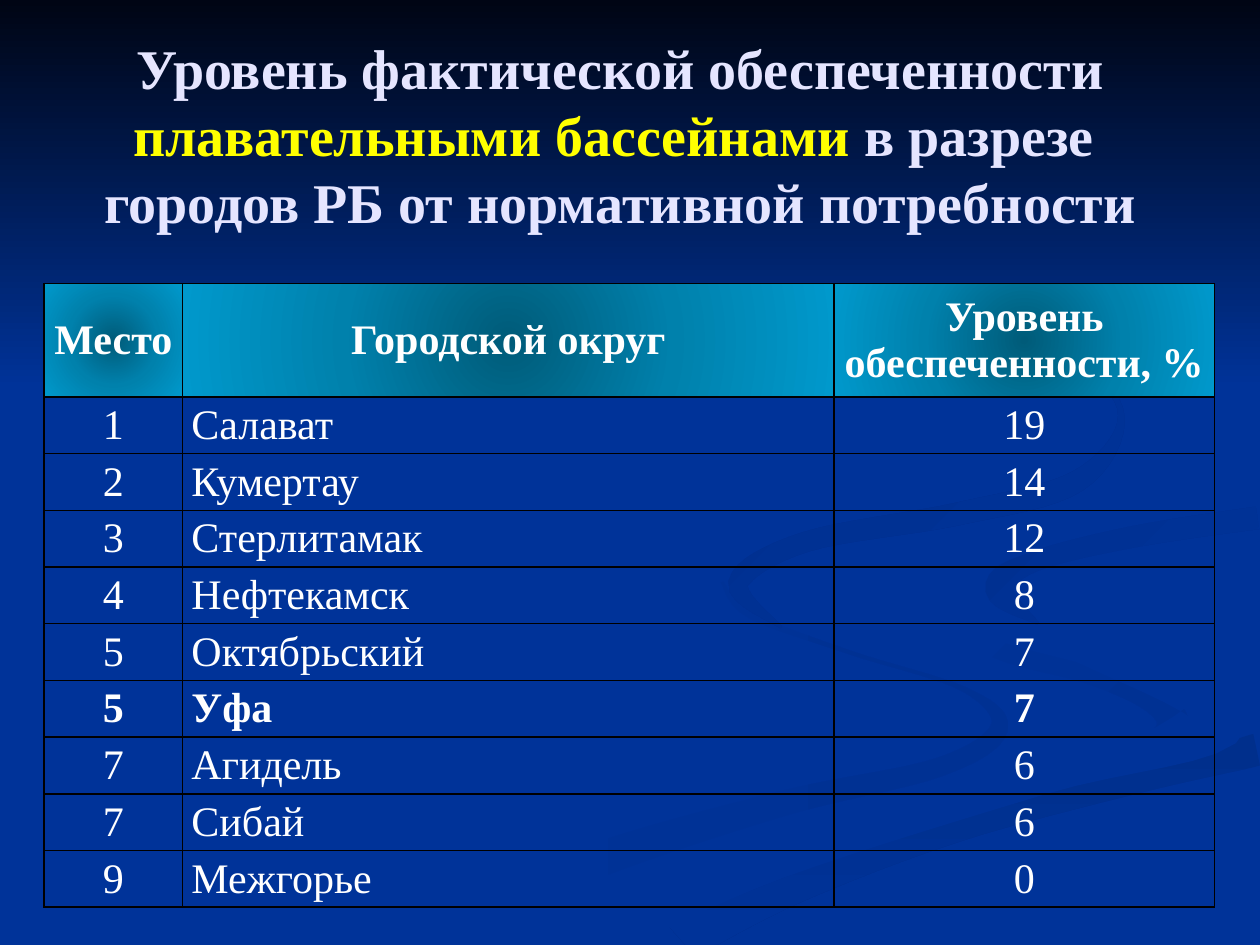
from math import hypot

from lxml import etree
from pptx import Presentation
from pptx.dml.color import RGBColor
from pptx.enum.shapes import MSO_SHAPE
from pptx.enum.text import MSO_ANCHOR, MSO_AUTO_SIZE, PP_ALIGN
from pptx.oxml import parse_xml
from pptx.oxml.ns import nsdecls, qn
from pptx.util import Inches, Pt

CENTER, LEFT = PP_ALIGN.CENTER, PP_ALIGN.LEFT
MIDDLE = MSO_ANCHOR.MIDDLE
NO_AUTOFIT = MSO_AUTO_SIZE.NONE
RECTANGLE = MSO_SHAPE.RECTANGLE
SLIDE_WIDTH, SLIDE_HEIGHT = 10, 7.5
STEPS_PER_SPAN = 8

COLORS = {
    "background": "003399", "night": "000514", "title": "E5E5FF", "accent": "FFFF00",
    "text": "FFFFFF", "border": "000000",
    "header_core": "005B79", "header_middle": "0081AC", "header_edge": "0099CC",
    "shade_left": "003193", "shade_bottom": "002F8C", "shade_right": "003091",
    "shade_top": "002F8E",
}

# Each ribbon: start colour, end colour, gradient angle, knots of (x, y, thickness).
RIBBONS = {
    "left tail": ("background", "shade_left", 0, [
        (5.73, 4.62, 0.02), (5.95, 4.88, 0.05), (6.75, 5.18, 0.03), (7.65, 5.47, 0.04),
        (7.93, 5.78, 0.14), (7.45, 6.09, 0.15), (6.2, 6.38, 0.2), (4.6, 6.88, 0.28),
        (3.3, 7.49, 0.28)]),
    "right bend": ("background", "shade_left", 45, [
        (7.24, 4.66, 0), (7.4, 4.9, 0.06), (7.95, 5.17, 0.14), (8.65, 5.36, 0.14),
        (9.15, 5.57, 0.18), (9.3, 5.78, 0.25), (8.94, 6.05, 0)]),
    "lower sweep": ("shade_bottom", "background", 90, [
        (5.37, 7.49, 0.33), (6.3, 7.06, 0.23), (7.6, 6.58, 0.2), (9.03, 6.2, 0.19),
        (9.98, 5.95, 0.26)]),
    "main ribbon": ("background", "background", 0, [
        (9.99, 3.95, 0.15), (8.6, 4.18, 0.15), (7.55, 4.6, 0.5), (8.6, 5.17, 0.2),
        (9.7, 5.65, 0.5), (8.3, 6.25, 0.1), (6.2, 6.91, 0.12), (4.9, 7.49, 0.13)]),
    "upper branch": ("shade_right", "background", 45, [
        (9.98, 4.11, 0.18), (9, 4.26, 0.17), (8.2, 4.46, 0.16), (7.93, 4.68, 0.22),
        (8.24, 4.95, 0.02)]),
    "top swirl": ("shade_top", "background", 45, [
        (7.64, 2.34, 0.01), (8.5, 2.81, 0.05), (8.9, 3.3, 0.05), (8.55, 3.82, 0.17),
        (7.6, 4.08, 0.18), (6.4, 4.3, 0.16), (5.86, 4.63, 0.16), (6.2, 4.98, 0.02)]),
}
TITLE_LINES = [
    [("Уровень фактической обеспеченности ", "title"),
     ("плавательными бассейнами ", "accent"), ("в разрезе ", "title")],
    [("городов РБ от нормативной потребности", "title")],
]
HEADER = ("Место", "Городской округ", "Уровень обеспеченности, %")
CITIES = [
    ("1", "Салават", "19"), ("2", "Кумертау", "14"), ("3", "Стерлитамак", "12"),
    ("4", "Нефтекамск", "8"), ("5", "Октябрьский", "7"), ("5", "Уфа", "7"),
    ("7", "Агидель", "6"), ("7", "Сибай", "6"), ("9", "Межгорье", "0"),
]
BOLD_CITY = "Уфа"


def smooth(knots):
    """Return samples of the Catmull-Rom curve that passes through the knots."""
    padded = [knots[0], *knots, knots[-1]]
    samples = []
    for span in zip(padded, padded[1:], padded[2:], padded[3:]):
        for step in range(STEPS_PER_SPAN):
            t = step / STEPS_PER_SPAN
            samples.append(tuple(
                b + t * (c - a + t * (2 * a - 5 * b + 4 * c - d
                                      + t * (3 * b - a - 3 * c + d))) / 2
                for a, b, c, d in zip(*span)))
    return samples + [knots[-1]]


def ribbon_outline(knots):
    """Return the outline half a thickness to either side of the smoothed knots."""
    samples = smooth(knots)
    neighbours = zip([samples[0], *samples], samples, samples[1:] + [samples[-1]])
    one_side, other_side = [], []
    for before, (x, y, thickness), after in neighbours:
        run, rise = after[0] - before[0], after[1] - before[1]
        scale = thickness / 2 / hypot(run, rise)
        for side, sign in ((one_side, 1), (other_side, -1)):
            side.append((min(x - sign * rise * scale, SLIDE_WIDTH),
                         min(y + sign * run * scale, SLIDE_HEIGHT)))
    return one_side + other_side[::-1]


class SlideBuilder:
    """Holds the style and the current slide and draws its elements."""

    font_name = "Times New Roman"

    def __init__(self, presentation):
        self.slide = presentation.slides.add_slide(presentation.slide_layouts[5])
        fill = self.slide.background.fill
        fill.solid()
        fill.fore_color.rgb = self.color("background")

    def color(self, name):
        return RGBColor.from_string(COLORS[name])

    def style(self, paragraph, size, bold, alignment):
        paragraph.alignment = alignment
        font = paragraph.font
        font.name, font.size, font.bold = self.font_name, Pt(size), bold

    def shade(self, shape, start, end, angle):
        shape.shadow.inherit = False
        shape.line.fill.background()
        shape.fill.gradient()
        shape.fill.gradient_angle = -angle % 360
        for stop, name, position in zip(shape.fill.gradient_stops, (start, end), (0, 1)):
            stop.color.rgb = self.color(name)
            stop.position = position

    def ribbon(self, start, end, angle, knots):
        corners = [(Inches(x), Inches(y)) for x, y in ribbon_outline(knots)]
        builder = self.slide.shapes.build_freeform(*corners[0])
        builder.add_line_segments(corners[1:], close=True)
        self.shade(builder.convert_to_shape(), start, end, angle)

    def sky(self, height):
        shape = self.slide.shapes.add_shape(
            RECTANGLE, 0, 0, Inches(SLIDE_WIDTH), Inches(height))
        self.shade(shape, "night", "background", 90)

    def title(self, lines, left, top, width, height):
        shape = self.slide.shapes.title
        shape.left, shape.top = Inches(left), Inches(top)
        shape.width, shape.height = Inches(width), Inches(height)
        self.slide.shapes._spTree.append(shape._element)
        frame = shape.text_frame
        frame.word_wrap, frame.auto_size, frame.vertical_anchor = True, NO_AUTOFIT, MIDDLE
        paragraph = frame.paragraphs[0]
        self.style(paragraph, 32, True, CENTER)
        for index, line in enumerate(lines):
            if index:
                paragraph.add_line_break()
            for text, name in line:
                run = paragraph.add_run()
                run.text = text
                run.font.color.rgb = self.color(name)

    def borders(self, cell):
        properties = cell._tc.get_or_add_tcPr()
        for side in ("lnL", "lnR", "lnT", "lnB"):
            line = etree.SubElement(properties, qn(f"a:{side}"), w=str(Pt(1)))
            fill = etree.SubElement(line, qn("a:solidFill"))
            etree.SubElement(fill, qn("a:srgbClr"), val=COLORS["border"])

    def radial_fill(self, cell):
        names = ("header_core", "header_middle", "header_edge")
        stops = "".join(
            f'<a:gs pos="{index * 50000}"><a:srgbClr val="{COLORS[name]}"/></a:gs>'
            for index, name in enumerate(names))
        cell._tc.get_or_add_tcPr().append(parse_xml(
            f'<a:gradFill {nsdecls("a")}><a:gsLst>{stops}</a:gsLst><a:path path="circle">'
            '<a:fillToRect l="50000" t="50000" r="50000" b="50000"/></a:path></a:gradFill>'))

    def cell(self, cell, text, bold, alignment, is_header):
        cell.margin_left = cell.margin_right = Inches(0.07)
        cell.margin_top = cell.margin_bottom = 0
        cell.vertical_anchor = MIDDLE
        cell.text = text
        paragraph = cell.text_frame.paragraphs[0]
        self.style(paragraph, 24, bold, alignment)
        paragraph.font.color.rgb = self.color("text")
        self.borders(cell)
        if is_header:
            self.radial_fill(cell)
        else:
            cell.fill.background()

    def table(self, rows, left, top, widths, row_height):
        heights = [2 * row_height] + [row_height] * (len(rows) - 1)
        table = self.slide.shapes.add_table(
            len(rows), len(widths), Inches(left), Inches(top),
            Inches(sum(widths)), Inches(sum(heights))).table
        table.first_row = table.horz_banding = False
        for column, width in zip(table.columns, widths):
            column.width = Inches(width)
        for index, (row, height, texts) in enumerate(zip(table.rows, heights, rows)):
            row.height = Inches(height)
            is_header = index == 0
            bold = is_header or BOLD_CITY in texts
            for position, (cell, text) in enumerate(zip(row.cells, texts)):
                alignment = LEFT if position == 1 and not is_header else CENTER
                self.cell(cell, text, bold, alignment, is_header)


def main():
    presentation = Presentation()
    presentation.slide_width = Inches(SLIDE_WIDTH)
    presentation.slide_height = Inches(SLIDE_HEIGHT)
    builder = SlideBuilder(presentation)
    for ribbon in RIBBONS.values():
        builder.ribbon(*ribbon)
    builder.sky(3.08)
    builder.title(TITLE_LINES, 0.2, 0.44, 9.45, 1.25)
    builder.table([HEADER, *CITIES], 0.35, 2.25, (1.1, 5.17, 3.02), 0.45)
    presentation.save("out.pptx")


if __name__ == "__main__":
    main()
